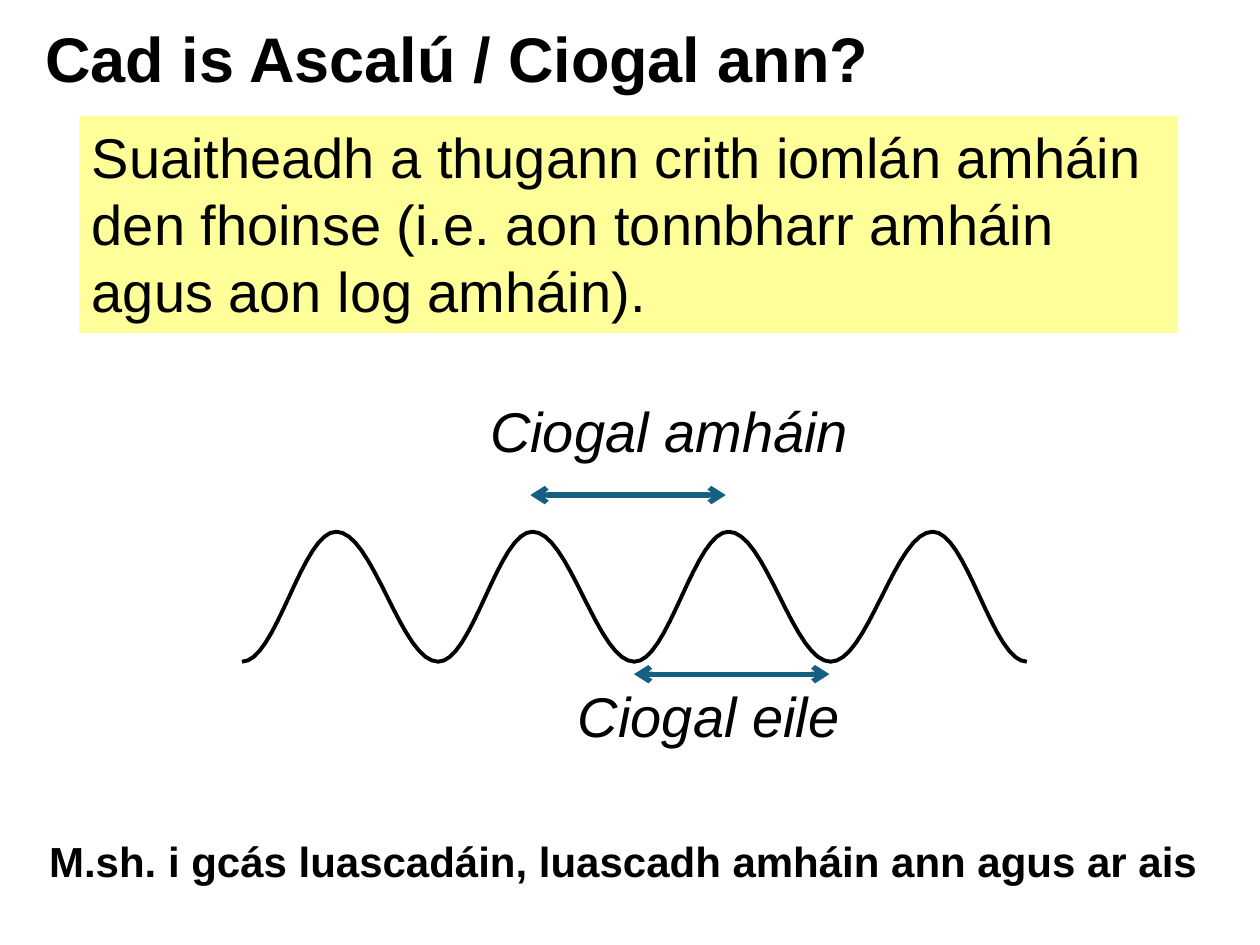
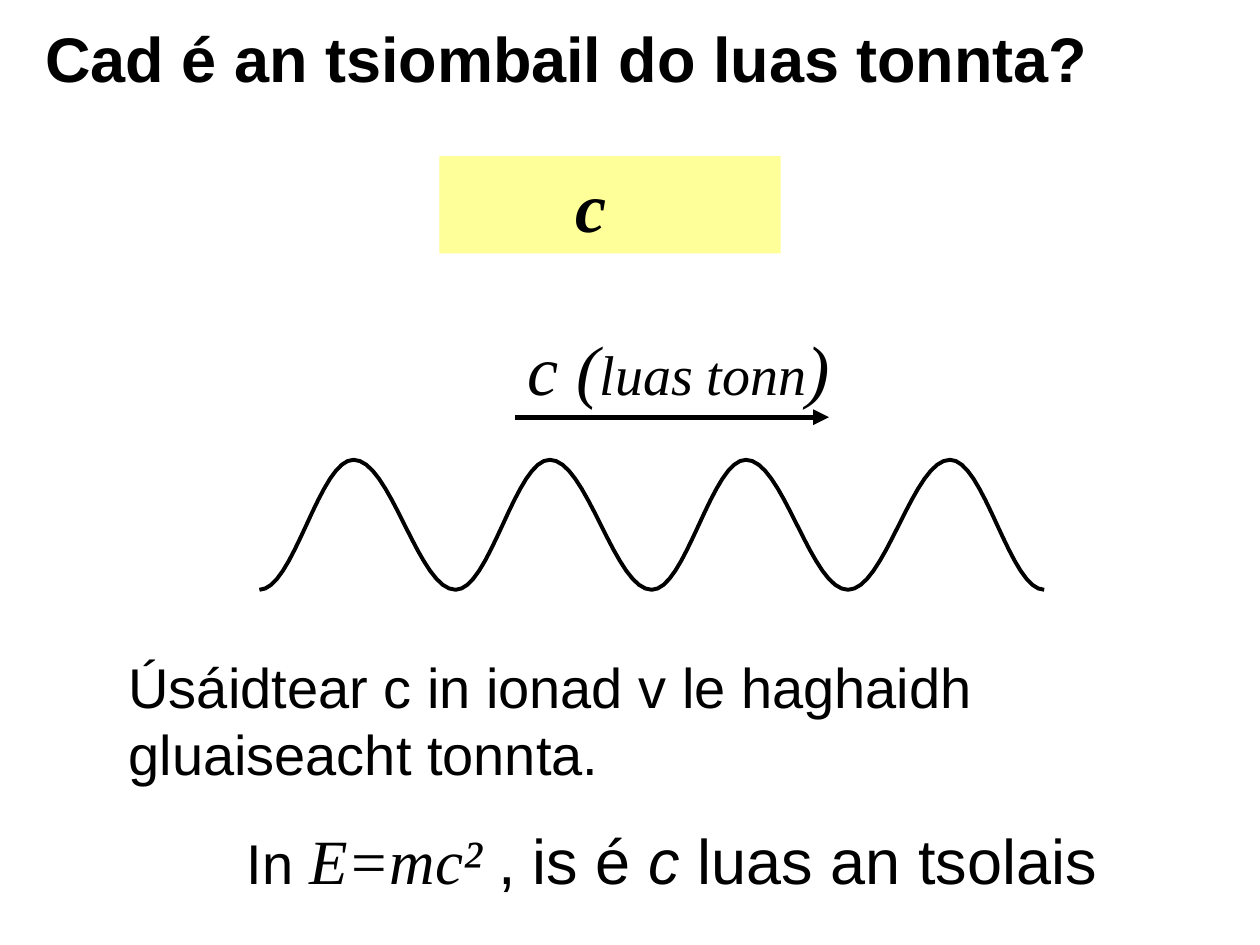
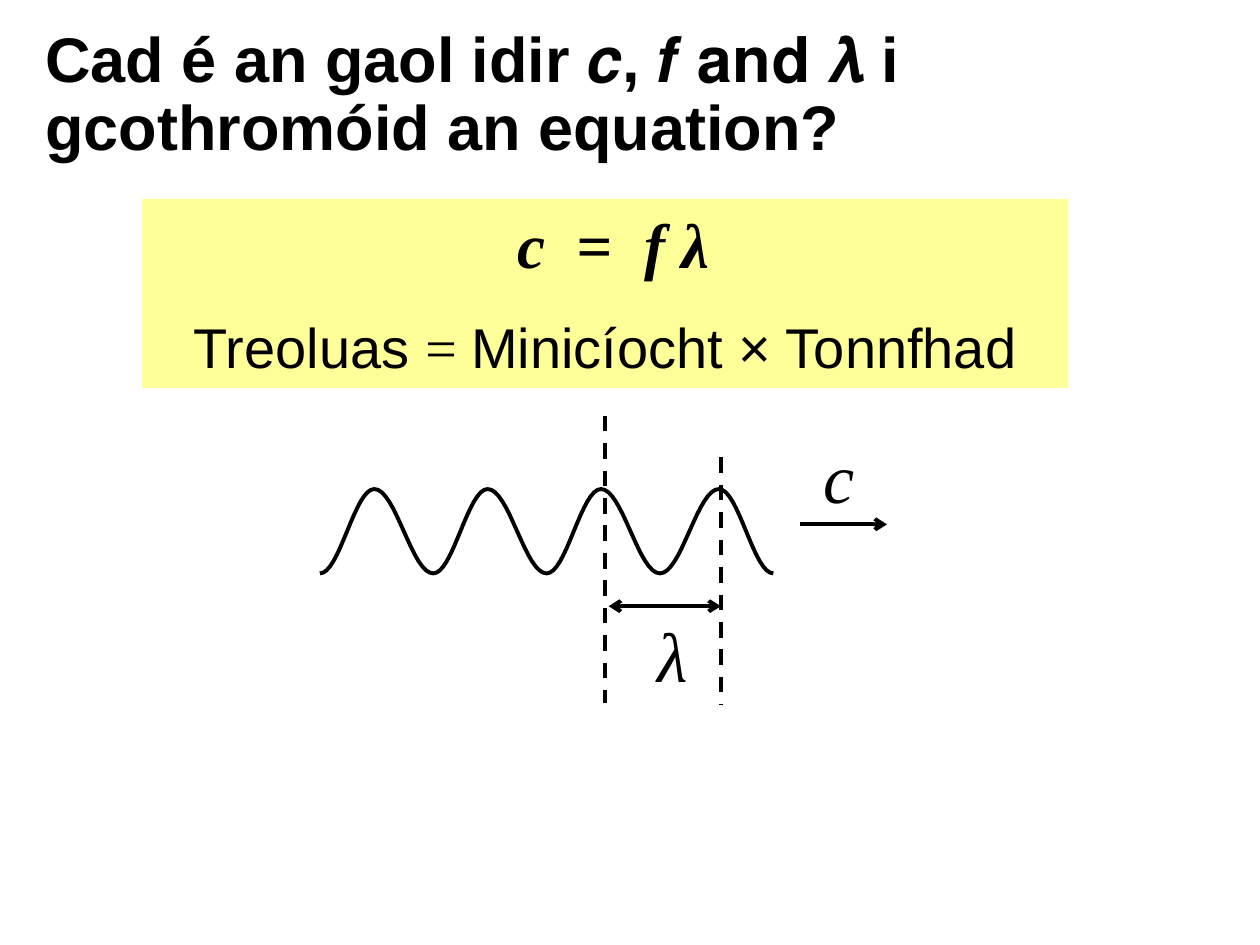
import dataclasses
import math

import lxml.etree
import pptx
import pptx.dml.color
import pptx.enum.dml
import pptx.enum.shapes
import pptx.enum.text
import pptx.oxml.ns
import pptx.util

Cm = pptx.util.Cm
Pt = pptx.util.Pt
Align = pptx.enum.text.PP_ALIGN


@dataclasses.dataclass(frozen=True)
class Theme:
    ink: pptx.dml.color.RGBColor = pptx.dml.color.RGBColor(0x00, 0x00, 0x00)
    panel: pptx.dml.color.RGBColor = pptx.dml.color.RGBColor(0xFF, 0xFF, 0x99)
    accent: pptx.dml.color.RGBColor = pptx.dml.color.RGBColor(0x15, 0x60, 0x82)
    sans: str = "Arial"
    serif: str = "Times New Roman"
    symbol: int = 40
    title: int = 36
    body: int = 32
    note: int = 24
    thin: float = 2.25
    thick: float = 3


theme = Theme()


def write_text(box, paragraphs, align=Align.LEFT, wrap=True):
    frame = box.text_frame
    frame.word_wrap = wrap
    frame.auto_size = pptx.enum.text.MSO_AUTO_SIZE.SHAPE_TO_FIT_TEXT
    frame.vertical_anchor = pptx.enum.text.MSO_ANCHOR.TOP
    for index, spans in enumerate(paragraphs):
        para = frame.add_paragraph() if index else frame.paragraphs[0]
        para.alignment = align
        if index:
            para.space_before = Pt(18)
        for text, size, font, style in spans:
            span = para.add_run()
            span.text = text
            span.font.size = Pt(size)
            span.font.name = font
            span.font.bold = "b" in style
            span.font.italic = "i" in style
            span.font.color.rgb = theme.ink
            if "w" in style:
                span.font._element.set("spc", "900")


def draw_line(slide, start, end, color, width, head="none", tail="none", dashed=False):
    line = slide.shapes.add_connector(
        pptx.enum.shapes.MSO_CONNECTOR.STRAIGHT,
        Cm(start[0]), Cm(start[1]), Cm(end[0]), Cm(end[1]),
    )
    line.line.color.rgb = color
    line.line.width = Pt(width)
    if dashed:
        line.line.dash_style = pptx.enum.dml.MSO_LINE.DASH
    outline = line.line._get_or_add_ln()
    for tag, kind in (("a:headEnd", head), ("a:tailEnd", tail)):
        lxml.etree.SubElement(outline, pptx.oxml.ns.qn(tag)).set("type", kind)
    lxml.etree.SubElement(line._element.spPr, pptx.oxml.ns.qn("a:effectLst"))


deck = pptx.Presentation()
deck.slide_width = Cm(25.4)
deck.slide_height = Cm(19.05)

turning_points = (0, 0.12, 0.25, 0.37, 0.5, 0.62, 0.75, 0.88, 1)
steps = 16

pages = (
    ("Cad is Ascalú / Ciogal ann?", 1.65, (1.6, 2.34, 22.15, 4.37), (4.88, 10.72, 15.82, 2.62)),
    ("Cad é an tsiombail do luas tonnta?", 1.65, (8.86, 3.15, 6.88, 1.96), (5.23, 9.27, 15.82, 2.62)),
    ("Cad é an gaol idir 𝒄, 𝒇 𝐚𝐧𝐝 𝝀 i gcothromóid an equation?", 3.02,
     (2.87, 4.01, 18.67, 3.81), (6.45, 9.86, 9.14, 1.7)),
)
slides = []
panels = []
for title, title_height, panel_area, wave_area in pages:
    slide = deck.slides.add_slide(deck.slide_layouts[5])
    slides.append(slide)

    panel = slide.shapes.add_shape(
        pptx.enum.shapes.MSO_SHAPE.RECTANGLE, *(Cm(length) for length in panel_area)
    )
    panel.shadow.inherit = False
    panel.fill.solid()
    panel.fill.fore_color.rgb = theme.panel
    panel.line.fill.background()
    panels.append(panel)

    heading = slide.shapes.title
    heading.left, heading.top = Cm(0.66), Cm(0.43)
    heading.width, heading.height = Cm(24.23), Cm(title_height)
    write_text(heading, [[(title, theme.title, theme.sans, "b")]])
    heading.text_frame.paragraphs[0].line_spacing = 0.9

    left, top, width, height = wave_area
    curve = []
    for number, (begin, finish) in enumerate(zip(turning_points, turning_points[1:])):
        for step in range(1, steps + 1):
            x = begin + (finish - begin) * step / steps
            y = (1 + math.cos(math.pi * (number + step / steps))) / 2
            curve.append((Cm(left + width * x), Cm(top + height * y)))
    builder = slide.shapes.build_freeform(Cm(left), Cm(top + height))
    builder.add_line_segments(curve, close=False)
    wave = builder.convert_to_shape()
    wave.shadow.inherit = False
    wave.fill.background()
    wave.line.color.rgb = theme.ink
    wave.line.width = Pt(theme.thin)

cycle, speed, relation = slides

write_text(panels[0], [[(
    "Suaitheadh a thugann crith iomlán amháin den fhoinse (i.e. aon tonnbharr amháin agus aon log amháin).",
    theme.body, theme.sans, "",
)]])
write_text(panels[1], [[("c", theme.symbol, theme.serif, "bi")]], Align.CENTER)
panels[1].text_frame.margin_right = Cm(1)
write_text(panels[2], [
    [
        ("c", theme.title, theme.serif, "bi"),
        (" ", theme.title, theme.serif, "biw"),
        ("=", theme.title, theme.serif, "bi"),
        (" ", theme.title, theme.serif, "biw"),
        ("f λ", theme.title, theme.serif, "bi"),
    ],
    [
        ("Treoluas ", theme.body, theme.sans, ""),
        ("= ", theme.body, theme.serif, ""),
        ("Minicíocht × Tonnfhad", theme.body, theme.sans, ""),
    ],
], Align.CENTER)
panels[2].text_frame.paragraphs[0]._p.get_or_add_pPr().set("marL", str(Pt(9)))

labels = (
    (cycle, (9.63, 7.87, 8.89, 1.63), True, [("Ciogal amháin", theme.body, theme.sans, "i")]),
    (cycle, (11.4, 13.61, 6.45, 1.63), True, [("Ciogal eile", theme.body, theme.sans, "i")]),
    (cycle, (0.74, 16.71, 23.88, 1.27), False, [
        ("M.sh. i gcás luascadáin, luascadh amháin ann agus ar ais", theme.note, theme.sans, "b"),
    ]),
    (speed, (10.39, 6.43, 6.65, 1.96), False, [
        ("c (", theme.symbol, theme.serif, "i"),
        ("luas tonn", theme.body, theme.serif, "i"),
        (")", theme.symbol, theme.serif, "i"),
    ]),
    (speed, (2.34, 13.03, 22.58, 3), True, [
        ("Úsáidtear c in ionad v le haghaidh gluaiseacht tonnta.", theme.body, theme.sans, ""),
    ]),
    (speed, (4.72, 16.43, 19.08, 1.8), True, [
        ("In", theme.body, theme.sans, ""),
        (" E=mc² ", theme.title, theme.serif, "i"),
        (", is é ", theme.title, theme.sans, ""),
        ("c", theme.title, theme.sans, "i"),
        (" luas an tsolais", theme.title, theme.sans, ""),
    ]),
    (relation, (13, 12.22, 1.52, 1.96), True, [("λ", theme.symbol, theme.serif, "i")]),
    (relation, (16.36, 8.61, 1.19, 1.96), True, [("c", theme.symbol, theme.serif, "i")]),
)
for slide, area, wrap, spans in labels:
    box = slide.shapes.add_textbox(*(Cm(length) for length in area))
    write_text(box, [spans], wrap=wrap)

for x, y in ((10.69, 9.98), (12.78, 13.59)):
    draw_line(cycle, (x, y), (x + 3.94, y), theme.accent, theme.thick, "arrow", "arrow")

draw_line(speed, (10.39, 8.41), (16.71, 8.41), theme.ink, theme.thick, tail="triangle")

draw_line(relation, (12.27, 12.22), (14.53, 12.22), theme.ink, theme.thin, "arrow", "arrow")
draw_line(relation, (16.13, 10.57), (17.88, 10.57), theme.ink, theme.thin, tail="arrow")
for x, top, bottom in ((12.19, 8.38, 14.17), (14.53, 9.22, 14.2)):
    draw_line(relation, (x, top), (x, bottom), theme.ink, theme.thin, dashed=True)

deck.save("out.pptx")
